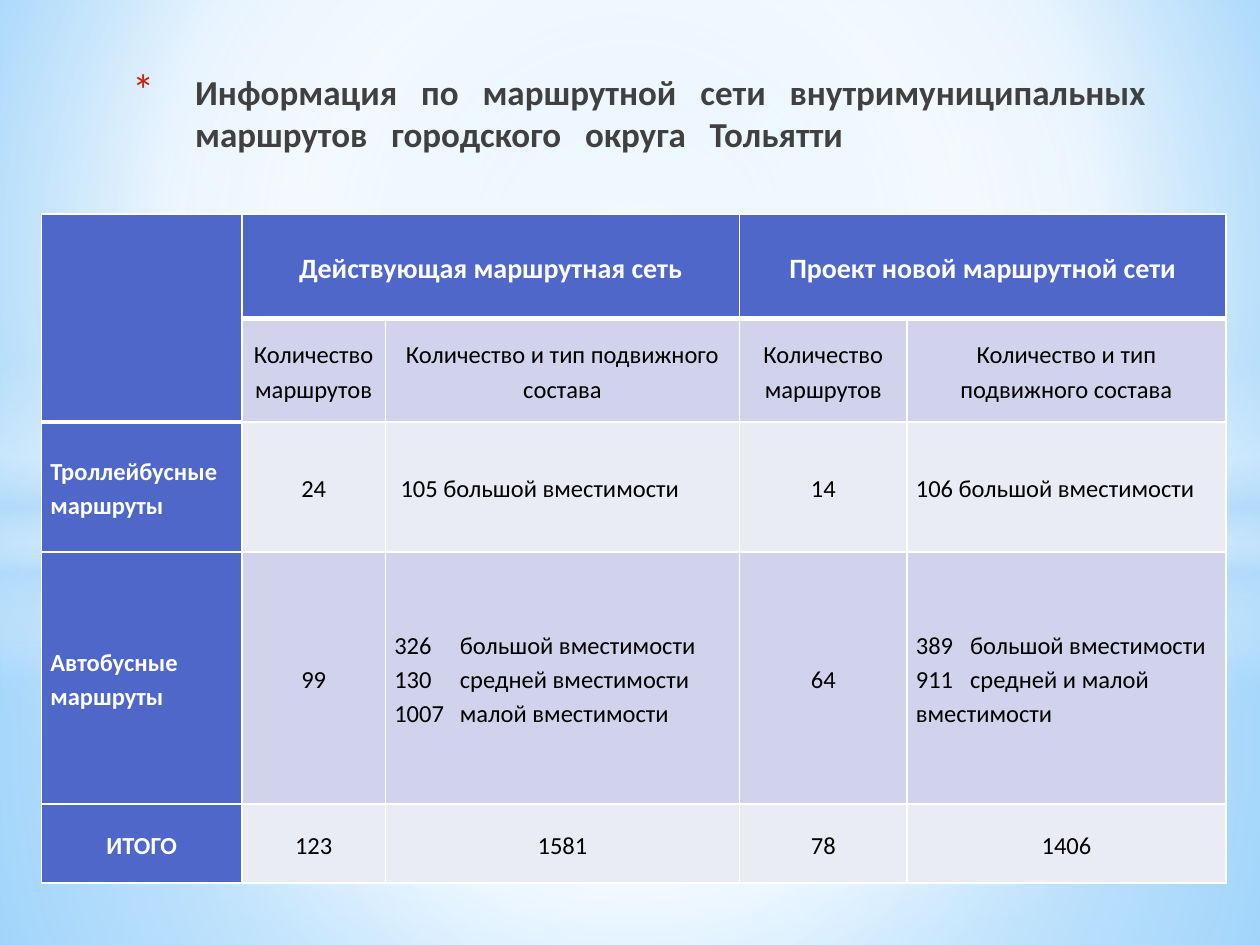
from typing import NamedTuple

from lxml import etree
from pptx import Presentation
from pptx.dml.color import RGBColor
from pptx.enum.shapes import MSO_SHAPE
from pptx.enum.text import MSO_ANCHOR, PP_ALIGN
from pptx.oxml.ns import qn
from pptx.util import Inches, Pt

RECT, OVAL = MSO_SHAPE.RECTANGLE, MSO_SHAPE.OVAL
LEFT, CENTER, JUST = PP_ALIGN.LEFT, PP_ALIGN.CENTER, PP_ALIGN.JUSTIFY
MIDDLE = MSO_ANCHOR.MIDDLE

WHITE = RGBColor(0xFF, 0xFF, 0xFF)
BLACK = RGBColor(0, 0, 0)
GRAY = RGBColor(0x40, 0x40, 0x40)
RED = RGBColor(0xC3, 0x26, 0x0C)
BLUE = RGBColor(0x4E, 0x67, 0xC8)
LILAC = RGBColor(0xD0, 0xD3, 0xEB)
PALE = RGBColor(0xE9, 0xEB, 0xF5)
SKY = RGBColor(0xB4, 0xDC, 0xFA)
DEEP = RGBColor(0x5B, 0xB9, 0xFF)
MIST = RGBColor(0x9E, 0xD5, 0xFF)
FONT = "Calibri"


class Stop(NamedTuple):
    pos: int
    color: RGBColor
    alpha: int = 100


class Glow(NamedTuple):
    kind: MSO_SHAPE
    top: float
    height: float
    stops: list[Stop]
    focus: tuple | None = (50, 50, 50, 50)


class Text(NamedTuple):
    lines: list[str]
    align: PP_ALIGN = CENTER
    indent: float = 0
    tab: float = 0


GLOWS = [
    Glow(RECT, 4.23, 3.27, [Stop(0, WHITE, 91), Stop(37, WHITE, 76), Stop(100, SKY, 79)]),
    Glow(RECT, 0, 4.23, [Stop(0, WHITE, 89), Stop(48, WHITE, 62), Stop(100, SKY, 79)]),
    Glow(RECT, 2.9, 2.5, [Stop(0, WHITE, 0), Stop(29, WHITE, 30), Stop(45, SKY, 40),
                          Stop(55, WHITE, 26), Stop(65, SKY, 60), Stop(100, WHITE, 0)], None),
    Glow(OVAL, 1.75, 5.58, [Stop(0, WHITE), Stop(54, WHITE, 0)]),
]
TITLE = "Информация по маршрутной сети внутримуниципальных маршрутов городского округа Тольятти"
COLS = [1.59, 1.14, 2.81, 1.33, 2.53]
ROWS = [0.83, 0.82, 1.03, 2, 0.63]
COUNT = Text(["Количество маршрутов"])
FLEET = Text(["Количество и тип подвижного состава"])
CELLS = [
    [None, Text(["Действующая маршрутная сеть"]), None,
     Text(["Проект новой маршрутной сети"]), None],
    [None, COUNT, FLEET, COUNT, FLEET],
    [Text(["Троллейбусные маршруты"], LEFT), Text(["24"]),
     Text(["105 большой вместимости"], JUST, 0.05),
     Text(["14"]), Text(["106 большой вместимости"], JUST)],
    [Text(["Автобусные маршруты"], LEFT), Text(["99"]),
     Text(["326\tбольшой вместимости", "130\tсредней вместимости",
           "1007\tмалой вместимости"], LEFT, 0, 0.52),
     Text(["64"]),
     Text(["389\tбольшой вместимости", "911\tсредней и малой вместимости"], LEFT, 0, 0.43)],
    [Text(["ИТОГО"]), Text(["123"]), Text(["1581"]), Text(["78"]), Text(["1406"])],
]
MERGES = [(0, 0, 1, 0), (0, 1, 0, 2), (0, 3, 0, 4)]


def add(parent, tag: str, **attrs):
    return etree.SubElement(parent, qn(tag), {k: str(v) for k, v in attrs.items()})


def blend(fill, parent, stops: list[Stop], focus: tuple | None) -> None:
    """Give a fill a gradient: round with a focus, top to bottom without."""
    fill.gradient()
    grad = next(parent.iter(qn("a:gradFill")))
    for child in list(grad):
        grad.remove(child)
    group = add(grad, "a:gsLst")
    for stop in stops:
        color = add(add(group, "a:gs", pos=stop.pos * 1000), "a:srgbClr", val=stop.color)
        if stop.alpha < 100:
            add(color, "a:alpha", val=stop.alpha * 1000)
    if focus:
        sides = {side: part * 1000 for side, part in zip("ltrb", focus)}
        add(add(grad, "a:path", path="circle"), "a:fillToRect", **sides)
    else:
        add(grad, "a:lin", ang=90 * 60000, scaled=0)


def draw_glow(slide, glow: Glow) -> None:
    shape = slide.shapes.add_shape(glow.kind, 0, Inches(glow.top), Inches(10), Inches(glow.height))
    shape.shadow.inherit = False
    shape.line.fill.background()
    blend(shape.fill, shape.element.spPr, glow.stops, glow.focus)


def draw_title(slide) -> None:
    frame = slide.shapes.add_textbox(Inches(0.75), Inches(0.51), Inches(8.82), Inches(1.6)).text_frame
    frame.word_wrap = True
    para = frame.paragraphs[0]
    font = para.font
    font.name, font.size, font.bold = FONT, Pt(20), True
    font.color.rgb = GRAY
    for i, word in enumerate(TITLE.split()):
        if i:
            gap = para.add_run()
            gap.text = " "
            gap.font._element.set("spc", "900")
        para.add_run().text = word
    props = para._p.get_or_add_pPr()
    props.set("marL", str(Inches(0.7)))
    props.set("indent", str(Inches(-0.5)))
    bullet = [etree.Element(qn(tag)) for tag in ("a:buClr", "a:buSzPct", "a:buFont", "a:buChar")]
    add(bullet[0], "a:srgbClr", val=RED)
    bullet[1].set("val", "128000")
    bullet[2].set("typeface", FONT)
    bullet[3].set("char", "*")
    for i, part in enumerate(bullet):
        props.insert(i, part)


def is_heavy(row: int, col: int) -> bool:
    """Tell whether the line under a cell closes the header."""
    return row == 0 or (row, col) == (1, 0)


def edge(cell, row: int, col: int) -> None:
    props = cell._tc.get_or_add_tcPr()
    heavy = {"T": row > 0 and is_heavy(row - 1, col), "B": is_heavy(row, col)}
    for side in "LRTB":
        line = add(props, f"a:ln{side}", w=Pt(3 if heavy.get(side) else 1))
        add(add(line, "a:solidFill"), "a:srgbClr", val=WHITE)


def write(cell, text: Text, size: int, bold: bool, color: RGBColor) -> None:
    frame = cell.text_frame
    for i, line in enumerate(text.lines):
        para = frame.add_paragraph() if i else frame.paragraphs[0]
        para.text = line
        para.alignment = text.align
        para.line_spacing = 1.15
        font = para.font
        font.name, font.size, font.bold = FONT, Pt(size), bold
        font.color.rgb = color
        props = para._p.get_or_add_pPr()
        if text.indent:
            props.set("marL", str(Inches(text.indent)))
        if text.tab:
            tabs = etree.Element(qn("a:tabLst"))
            add(tabs, "a:tab", pos=Inches(text.tab), algn="l")
            props.find(qn("a:defRPr")).addprevious(tabs)


def draw_table(slide) -> None:
    table = slide.shapes.add_table(len(ROWS), len(COLS), Inches(0.33), Inches(1.7),
                                   Inches(sum(COLS)), Inches(sum(ROWS))).table
    for col, width in zip(table.columns, COLS):
        col.width = Inches(width)
    for r, (height, texts) in enumerate(zip(ROWS, CELLS)):
        table.rows[r].height = Inches(height)
        for c, text in enumerate(texts):
            cell = table.cell(r, c)
            head = r == 0 or c == 0
            edge(cell, r, c)
            cell.fill.solid()
            cell.fill.fore_color.rgb = BLUE if head else LILAC if r % 2 else PALE
            cell.vertical_anchor = MIDDLE
            cell.margin_left = cell.margin_right = Inches(0.07)
            cell.margin_top = cell.margin_bottom = 0
            if text:
                write(cell, text, 14 if r else 16, head, WHITE if head else BLACK)
    for top, left, bottom, right in MERGES:
        table.cell(top, left).merge(table.cell(bottom, right))


def main() -> None:
    deck = Presentation()
    deck.slide_width, deck.slide_height = Inches(10), Inches(7.5)
    slide = deck.slides.add_slide(deck.slide_layouts[6])
    back = slide.background.fill
    blend(back, slide.element, [Stop(0, MIST), Stop(60, WHITE), Stop(100, DEEP)], (20, 10, 20, 60))
    for glow in GLOWS:
        draw_glow(slide, glow)
    draw_title(slide)
    draw_table(slide)
    deck.save("out.pptx")


if __name__ == "__main__":
    main()
